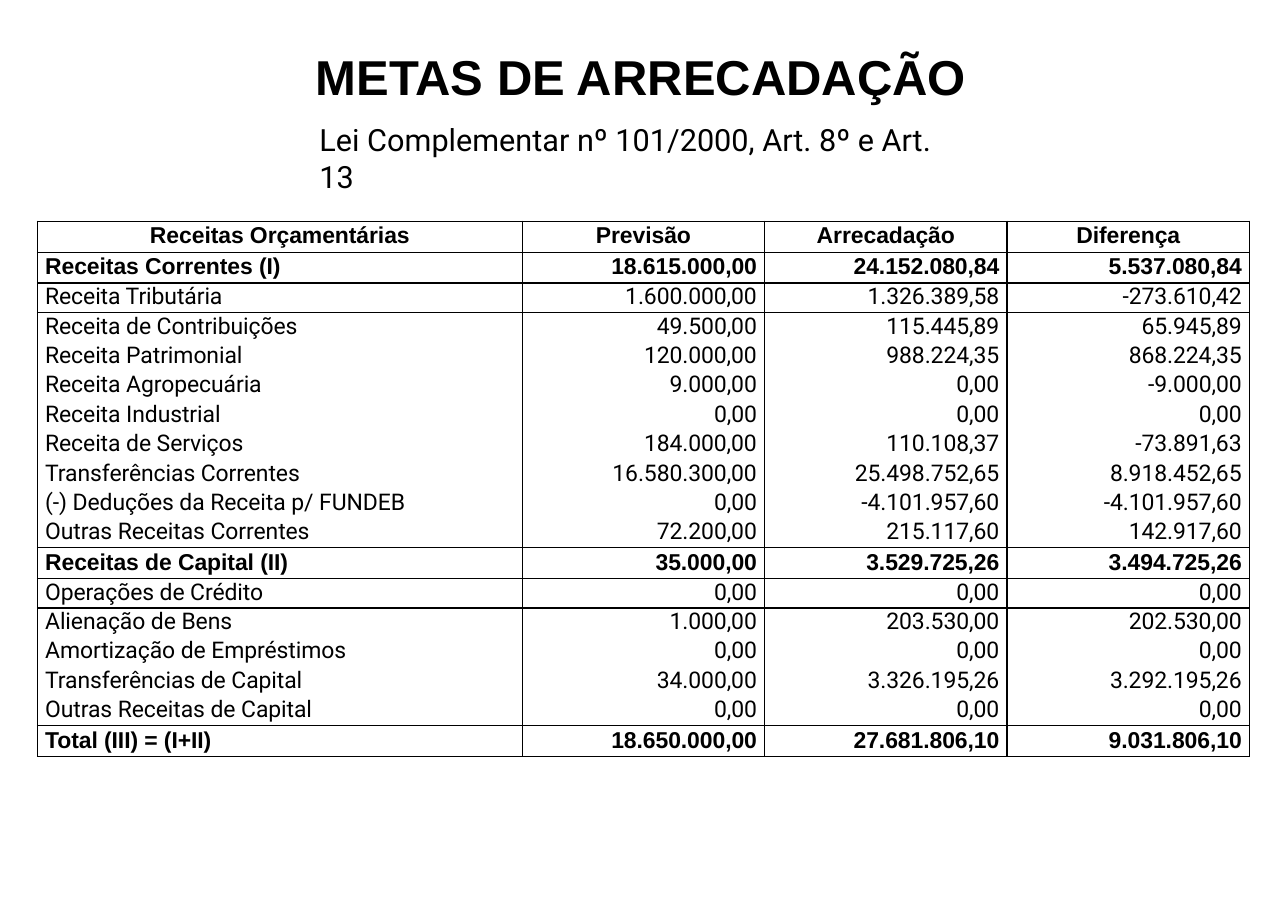
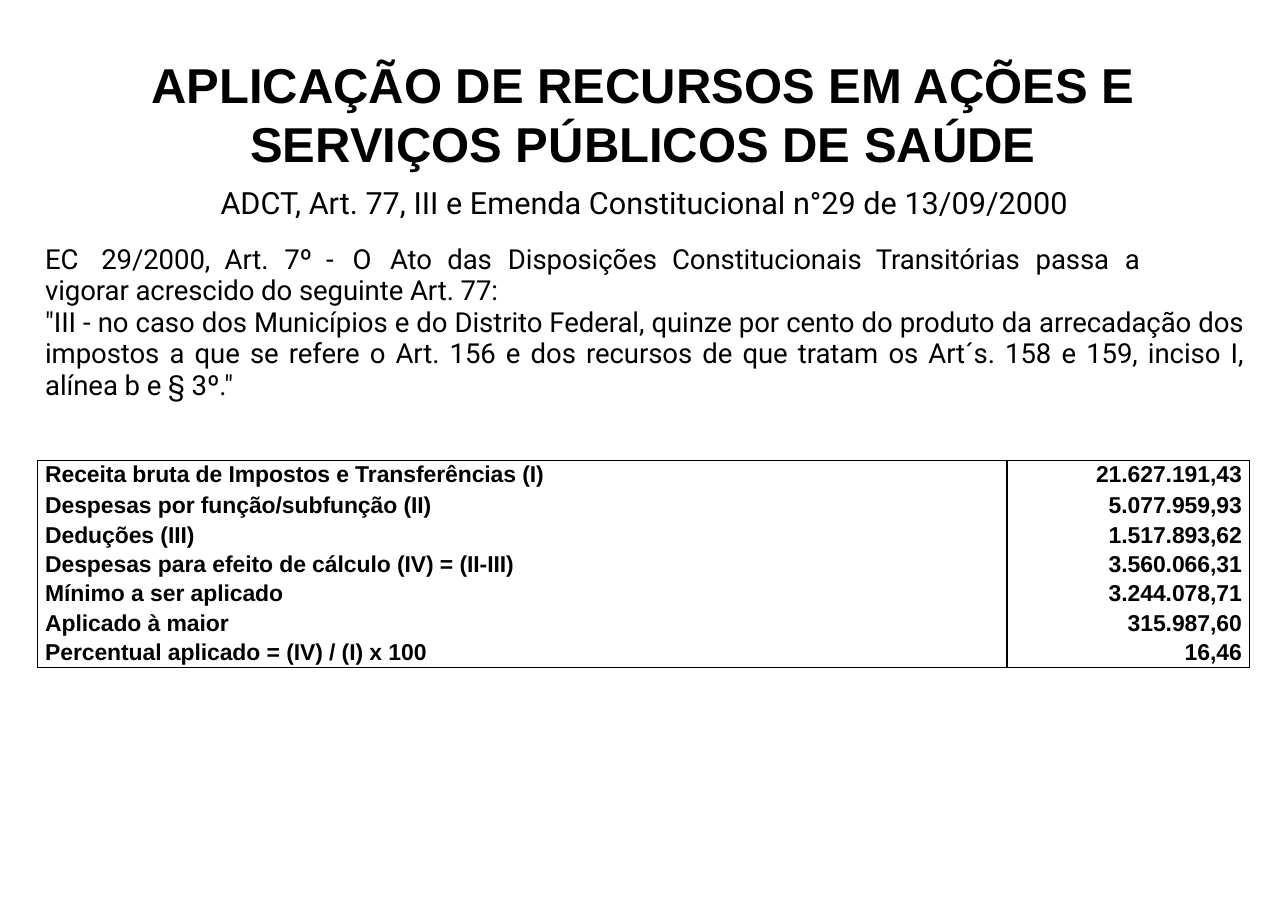
"""Build two slides on revenue targets and health spending."""
from dataclasses import dataclass

from lxml import etree
from pptx import Presentation
from pptx.dml.color import RGBColor
from pptx.enum.text import MSO_ANCHOR, PP_ALIGN
from pptx.oxml.ns import qn
from pptx.util import Inches, Pt

LEFT, CENTER, RIGHT, JUSTIFY = PP_ALIGN.LEFT, PP_ALIGN.CENTER, PP_ALIGN.RIGHT, PP_ALIGN.JUSTIFY
TOP = MSO_ANCHOR.TOP
BLACK = "000000"
TABLE_LEFT = 0.34
HEAD_ROW = 0.28
TAB_STOPS = (0.51, 1.63, 2.17, 2.55, 2.79, 3.13, 3.65, 4.2, 5.69, 7.54, 8.99, 9.8)


@dataclass(frozen=True)
class Style:
    font: str
    size: float
    bold: bool = False
    spacing: int = 0


@dataclass(frozen=True)
class Para:
    text: str
    style: Style
    align: PP_ALIGN = LEFT
    before: float = 0
    line: float | None = None
    tabs: tuple[float, ...] = ()


@dataclass(frozen=True)
class Grid:
    top: float
    height: float
    cols: tuple[float, ...]
    rows: tuple[tuple[str, ...], ...]
    tall: frozenset[int]
    bold: frozenset[int]
    ruled: frozenset[int]
    header: bool = False


TITLE = Style("Arial", 32, True)
SUBTITLE = Style("Roboto", 20)
BODY = Style("Roboto", 18, spacing=-5)
CELL = Style("Roboto", 15, spacing=-5)
CELL_BOLD = Style("Arial", 15, True, -5)

REVENUE = Grid(
    top=2.01, height=4.86, cols=(4.4, 2.2, 2.2, 2.2), header=True,
    tall=frozenset({0, 1, 11, 17}), bold=frozenset({0, 1, 11, 17}),
    ruled=frozenset({0, 1, 2, 10, 11, 12, 16, 17}),
    rows=(
        ("Receitas Orçamentárias", "Previsão", "Arrecadação", "Diferença"),
        ("Receitas Correntes (I)", "18.615.000,00", "24.152.080,84", "5.537.080,84"),
        ("Receita Tributária", "1.600.000,00", "1.326.389,58", "-273.610,42"),
        ("Receita de Contribuições", "49.500,00", "115.445,89", "65.945,89"),
        ("Receita Patrimonial", "120.000,00", "988.224,35", "868.224,35"),
        ("Receita Agropecuária", "9.000,00", "0,00", "-9.000,00"),
        ("Receita Industrial", "0,00", "0,00", "0,00"),
        ("Receita de Serviços", "184.000,00", "110.108,37", "-73.891,63"),
        ("Transferências Correntes", "16.580.300,00", "25.498.752,65", "8.918.452,65"),
        ("(-) Deduções da Receita p/ FUNDEB", "0,00", "-4.101.957,60", "-4.101.957,60"),
        ("Outras Receitas Correntes", "72.200,00", "215.117,60", "142.917,60"),
        ("Receitas de Capital (II)", "35.000,00", "3.529.725,26", "3.494.725,26"),
        ("Operações de Crédito", "0,00", "0,00", "0,00"),
        ("Alienação de Bens", "1.000,00", "203.530,00", "202.530,00"),
        ("Amortização de Empréstimos", "0,00", "0,00", "0,00"),
        ("Transferências de Capital", "34.000,00", "3.326.195,26", "3.292.195,26"),
        ("Outras Receitas de Capital", "0,00", "0,00", "0,00"),
        ("Total (III) = (I+II)", "18.650.000,00", "27.681.806,10", "9.031.806,10"),
    ),
)

HEALTH = Grid(
    top=4.18, height=1.88, cols=(8.8, 2.2),
    tall=frozenset({0}), bold=frozenset(range(7)), ruled=frozenset({6}),
    rows=(
        ("Receita bruta de Impostos e Transferências (I)", "21.627.191,43"),
        ("Despesas por função/subfunção (II)", "5.077.959,93"),
        ("Deduções (III)", "1.517.893,62"),
        ("Despesas para efeito de cálculo (IV) = (II-III)", "3.560.066,31"),
        ("Mínimo a ser aplicado", "3.244.078,71"),
        ("Aplicado à maior", "315.987,60"),
        ("Percentual aplicado = (IV) / (I) x 100", "16,46"),
    ),
)

LEGAL_TEXT = (
    Para("ADCT, Art. 77, III e Emenda Constitucional n°29 de 13/09/2000", SUBTITLE, CENTER, 1.1),
    Para("EC\t29/2000,\tArt.\t7º\t-\tO\tAto\tdas\tDisposições\tConstitucionais\tTransitórias\tpassa\ta\v"
         "vigorar acrescido do seguinte Art. 77:", BODY, before=14.6, line=20.7, tabs=TAB_STOPS),
    Para('"III - no caso dos Municípios e do Distrito Federal, quinze por cento do produto da '
         "arrecadação dos impostos a que se refere o Art. 156 e dos recursos de que tratam os "
         'Art´s. 158 e 159, inciso I, alínea b e § 3º."', BODY, JUSTIFY, line=20.6),
)


def rgb(color: str) -> RGBColor:
    return RGBColor.from_string(color)


def write(p, para: Para) -> None:
    p.text = para.text
    fmt = {"alignment": para.align, "space_before": Pt(para.before)}
    if para.line:
        fmt["line_spacing"] = Pt(para.line)
    for name, value in fmt.items():
        setattr(p, name, value)
    if para.tabs:
        tab_list = etree.SubElement(p._p.get_or_add_pPr(), qn("a:tabLst"))
        for stop in para.tabs:
            etree.SubElement(tab_list, qn("a:tab"), pos=str(Inches(stop)), algn="l")
    style = para.style
    for r in p.runs:
        for name, value in {"name": style.font, "size": Pt(style.size), "bold": style.bold}.items():
            setattr(r.font, name, value)
        r.font.color.rgb = rgb(BLACK)
        if style.spacing:
            r.font._element.set("spc", str(style.spacing))


def add_text(s, box: tuple[float, float, float, float], paras: tuple[Para, ...], inset: float = 0.01) -> None:
    tf = s.shapes.add_textbox(*map(Inches, box)).text_frame
    fmt = {"word_wrap": True, "vertical_anchor": TOP, "margin_left": 0, "margin_right": 0,
           "margin_top": Inches(inset), "margin_bottom": 0}
    for name, value in fmt.items():
        setattr(tf, name, value)
    for i, para in enumerate(paras):
        write(tf.add_paragraph() if i else tf.paragraphs[0], para)


def add_title(s, box: tuple[float, float, float, float], text: str) -> None:
    add_text(s, box, (Para(text, TITLE, CENTER),), 0.05)


def set_borders(cell, top: bool, bottom: bool) -> None:
    tc_pr = cell._tc.get_or_add_tcPr()
    for side, shown in {"L": True, "R": True, "T": top, "B": bottom}.items():
        ln = etree.SubElement(tc_pr, qn(f"a:ln{side}"), w=str(Pt(1)))
        if shown:
            fill = etree.SubElement(ln, qn("a:solidFill"))
            etree.SubElement(fill, qn("a:srgbClr"), val=BLACK)
        else:
            etree.SubElement(ln, qn("a:noFill"))


def add_grid(s, grid: Grid) -> None:
    count = len(grid.rows)
    box = (TABLE_LEFT, grid.top, sum(grid.cols), grid.height)
    table = s.shapes.add_table(count, len(grid.cols), *map(Inches, box)).table
    table.first_row = grid.header
    table.horz_banding = False
    for col, width in zip(table.columns, grid.cols):
        col.width = Inches(width)
    body_row = (grid.height - HEAD_ROW * len(grid.tall)) / (count - len(grid.tall))
    margins = {"margin_left": Inches(0.07), "margin_right": Inches(0.07),
               "margin_top": 0, "margin_bottom": 0, "vertical_anchor": TOP}
    for i, texts in enumerate(grid.rows):
        table.rows[i].height = Inches(HEAD_ROW if i in grid.tall else body_row)
        style = CELL_BOLD if i in grid.bold else CELL
        for j, text in enumerate(texts):
            cell = table.cell(i, j)
            for name, value in margins.items():
                setattr(cell, name, value)
            set_borders(cell, i == 0 or i - 1 in grid.ruled, i in grid.ruled)
            cell.fill.background()
            align = CENTER if grid.header and i == 0 else RIGHT if j else LEFT
            write(cell.text_frame.paragraphs[0], Para(text, style, align, line=17.8))


def main() -> None:
    prs = Presentation()
    prs.slide_width, prs.slide_height = Inches(11.69), Inches(8.27)
    blank = prs.slide_layouts[6]

    s = prs.slides.add_slide(blank)
    add_title(s, (2.83, 0.37, 5.98, 0.56), "METAS DE ARRECADAÇÃO")
    add_text(s, (2.9, 1.09, 5.8, 0.36),
             (Para("Lei Complementar nº 101/2000, Art. 8º e Art. 13", SUBTITLE, before=1),))
    add_grid(s, REVENUE)

    s = prs.slides.add_slide(blank)
    add_title(s, (0.4, 0.45, 10.88, 1.07), "APLICAÇÃO DE RECURSOS EM AÇÕES E SERVIÇOS PÚBLICOS DE SAÚDE")
    add_text(s, (0.41, 1.66, 10.88, 2), LEGAL_TEXT)
    add_grid(s, HEALTH)

    prs.save("out.pptx")


if __name__ == "__main__":
    main()
